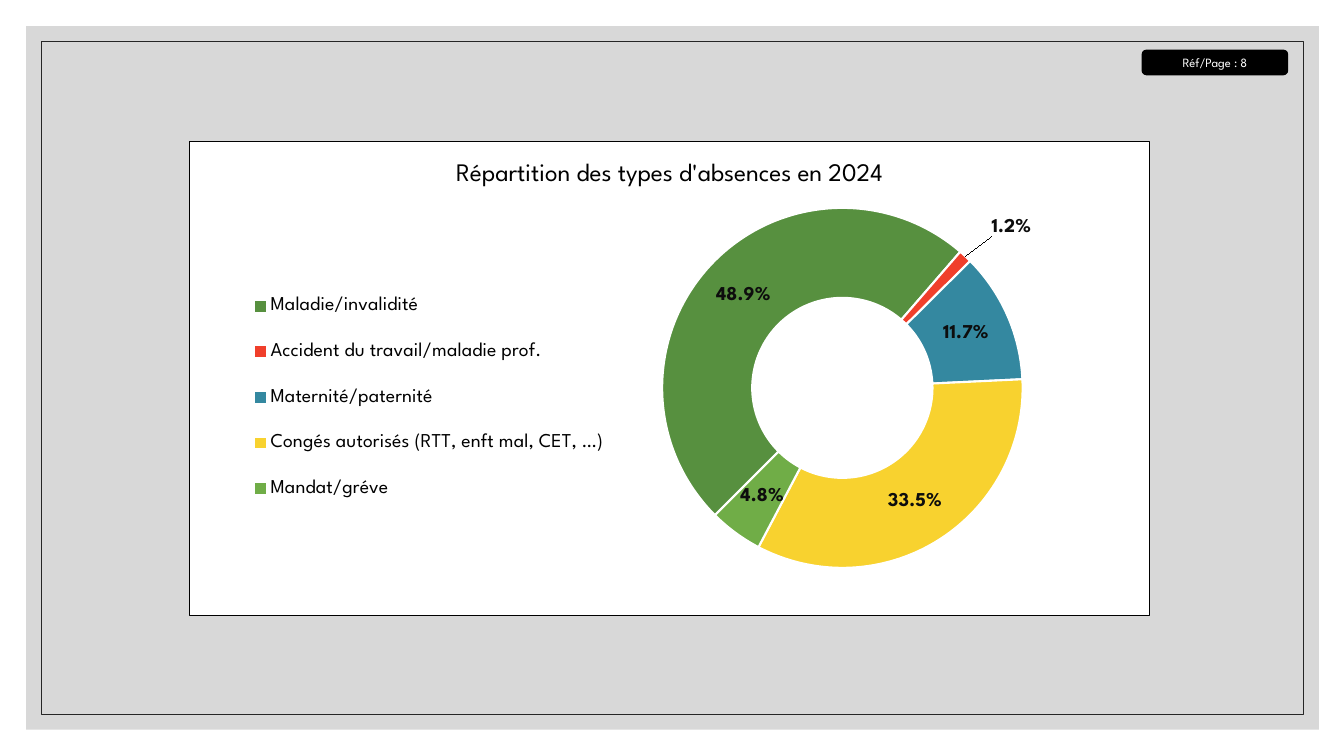
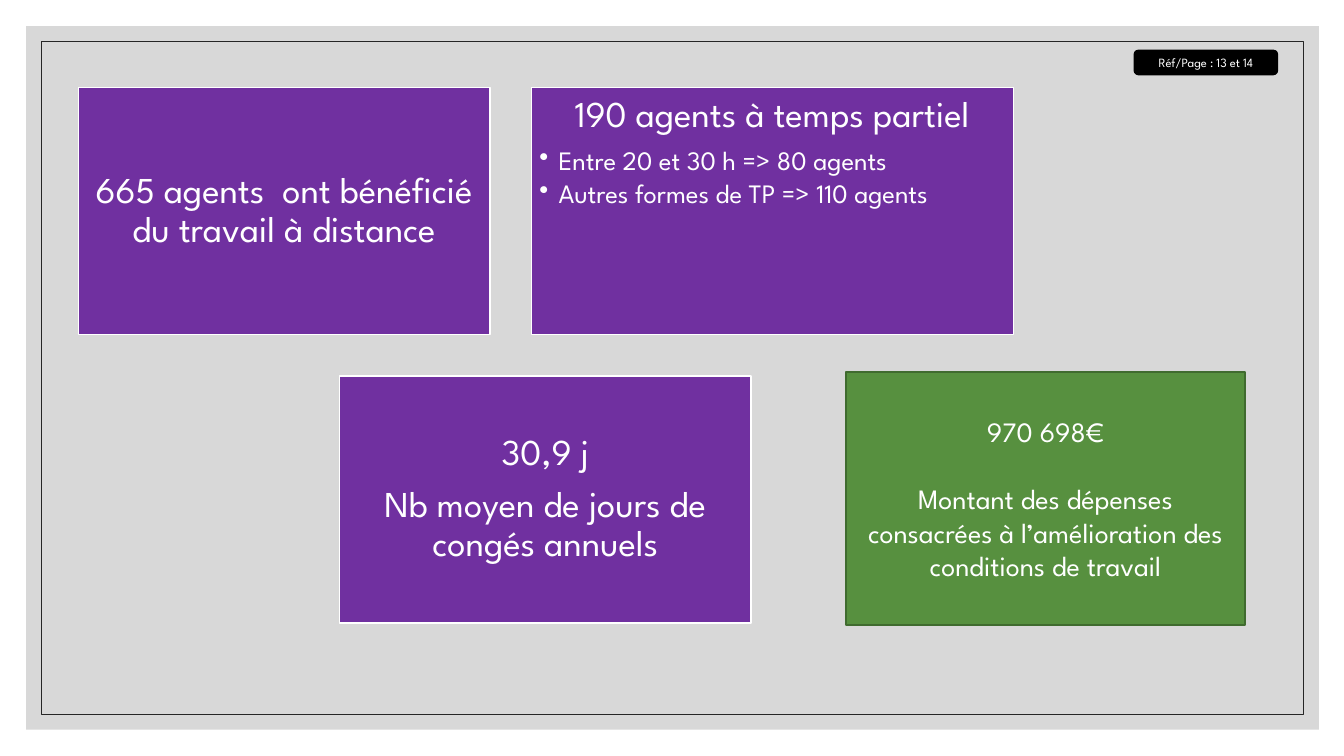
from dataclasses import dataclass

import pptx
import pptx.chart.data
import pptx.dml.color
import pptx.enum.chart
import pptx.enum.shapes
import pptx.enum.text
import pptx.oxml
import pptx.oxml.ns
import pptx.util
from pptx.util import Inches, Pt

RGBColor = pptx.dml.color.RGBColor
Shape = pptx.enum.shapes.MSO_SHAPE
Anchor = pptx.enum.text.MSO_ANCHOR
Align = pptx.enum.text.PP_ALIGN
qn = pptx.oxml.ns.qn

FONT = "League Spartan"
BLACK = RGBColor(0x00, 0x00, 0x00)
WHITE = RGBColor(0xFF, 0xFF, 0xFF)
GREY = RGBColor(0xD8, 0xD8, 0xD8)
FRAME = RGBColor(0x26, 0x26, 0x26)
INK = RGBColor(0x0D, 0x0D, 0x0D)
PURPLE = RGBColor(0x70, 0x30, 0xA0)
GREEN = RGBColor(0x57, 0x90, 0x3F)
MOSS = RGBColor(0x40, 0x6B, 0x2F)
RED = RGBColor(0xF0, 0x3F, 0x2B)
BLUE = RGBColor(0x34, 0x88, 0xA0)
YELLOW = RGBColor(0xF8, 0xD2, 0x2F)
LIME = RGBColor(0x70, 0xAD, 0x47)


@dataclass
class Box:
    left: float
    top: float
    width: float
    height: float


@dataclass
class Line:
    text: str
    size: float
    after: float = 0
    before: float = 0
    space: float = 1.0
    bullet: bool = False


@dataclass
class Card:
    box: Box
    lines: list[Line]
    fill: RGBColor = PURPLE
    edge: RGBColor = WHITE
    inset: float = 0.11
    anchor: Anchor = Anchor.MIDDLE


@dataclass
class Slice:
    name: str
    value: float
    fill: RGBColor


def big(text: str) -> Line:
    return Line(text, 26, after=9, space=0.9)


def item(text: str) -> Line:
    return Line(text, 19, after=3, space=0.9, bullet=True)


CARDS = [
    Card(Box(0.78, 0.87, 4.08, 2.45),
         [big("665 agents  ont bénéficié du travail à distance")]),
    Card(Box(5.27, 0.87, 4.78, 2.45),
         [big("190 agents à temps partiel"),
          item("Entre 20 et 30 h => 80 agents"),
          item("Autres formes de TP => 110 agents")],
         inset=0.08, anchor=Anchor.TOP),
    Card(Box(3.37, 3.73, 4.08, 2.45),
         [big("30,9 j"), big("Nb moyen de jours de congés annuels")]),
    Card(Box(8.39, 3.69, 3.96, 2.51),
         [Line("970 698€", 20),
          Line("Montant des dépenses consacrées à l’amélioration des "
               "conditions de travail", 20, before=24)],
         GREEN, MOSS, inset=0.1),
]

SLICES = [
    Slice("Maladie/invalidité", 0.489, GREEN),
    Slice("Accident du travail/maladie prof.", 0.012, RED),
    Slice("Maternité/paternité", 0.117, BLUE),
    Slice("Congés autorisés (RTT, enft mal, CET, …)", 0.335, YELLOW),
    Slice("Mandat/gréve", 0.048, LIME),
]


def add_box(slide, box: Box, kind=Shape.RECTANGLE, fill=None, edge=None,
            weight: float = 1):
    shape = slide.shapes.add_shape(
        kind, Inches(box.left), Inches(box.top),
        Inches(box.width), Inches(box.height))
    shape.shadow.inherit = False
    if fill is None:
        shape.fill.background()
    else:
        shape.fill.solid()
        shape.fill.fore_color.rgb = fill
    if edge is None:
        shape.line.fill.background()
    else:
        shape.line.color.rgb = edge
        shape.line.width = Pt(weight)
    return shape


def set_font(font, size: float, color: RGBColor, bold: bool = False) -> None:
    font.name = FONT
    font.size = Pt(size)
    font.bold = bold
    font.color.rgb = color


def add_bullet(par) -> None:
    props = par._p.get_or_add_pPr()
    props.set("marL", str(Inches(0.19)))
    props.set("indent", str(-Inches(0.19)))
    mark = props.makeelement(qn("a:buChar"), {"char": "•"})
    props.append(mark)


def write(frame, lines: list[Line]) -> None:
    frame.word_wrap = True
    frame.text = "\n".join(line.text for line in lines)
    for par, line in zip(frame.paragraphs, lines):
        par.alignment = Align.LEFT if line.bullet else Align.CENTER
        par.line_spacing = line.space
        par.space_after = Pt(line.after)
        if line.before:
            par.space_before = Pt(line.before)
        if line.bullet:
            add_bullet(par)
        for run in par.runs:
            set_font(run.font, line.size, WHITE)


def add_card(slide, card: Card) -> None:
    shape = add_box(slide, card.box, fill=card.fill, edge=card.edge)
    frame = shape.text_frame
    frame.vertical_anchor = card.anchor
    frame.margin_left = frame.margin_right = Inches(card.inset)
    frame.margin_top = frame.margin_bottom = Inches(card.inset)
    write(frame, card.lines)


def add_page(deck, pages: str, left: float, width: float):
    """Add a slide with the grey frame and the page reference tag."""
    slide = deck.slides.add_slide(deck.slide_layouts[6])
    add_box(slide, Box(0.26, 0.26, 12.82, 6.98), fill=GREY)
    add_box(slide, Box(0.41, 0.41, 12.52, 6.68), edge=FRAME, weight=0.5)
    tag = add_box(slide, Box(left, 0.5, width, 0.24),
                  Shape.ROUNDED_RECTANGLE, BLACK, BLACK)
    tag.text_frame.vertical_anchor = Anchor.MIDDLE
    write(tag.text_frame, [Line(f"Réf/Page : {pages}", 9)])
    return slide


def chart_xml(tag: str, inner: str):
    space = pptx.oxml.ns.nsdecls("c", "a")
    return pptx.oxml.parse_xml(f"<c:{tag} {space}>{inner}</c:{tag}>")


def place(parent, index: int, modes: str = "", **parts: float) -> None:
    """Give a chart part a manual layout, in shares of the chart size."""
    for old in parent.findall(qn("c:layout")):
        parent.remove(old)
    inner = modes + "".join(
        f'<c:{key} val="{share}"/>' for key, share in parts.items())
    layout = chart_xml("layout", f"<c:manualLayout>{inner}</c:manualLayout>")
    parent.insert(index, layout)


def style_area(chart) -> None:
    fill = f'<a:solidFill><a:srgbClr val="{WHITE}"/></a:solidFill>'
    edge = f'<a:solidFill><a:srgbClr val="{BLACK}"/></a:solidFill>'
    area = chart_xml("spPr", f'{fill}<a:ln w="{Pt(0.75)}">{edge}</a:ln>')
    chart._chartSpace.find(qn("c:chart")).addnext(area)


def style_ring(chart) -> None:
    plot = chart.plots[0]
    plot.vary_by_categories = True
    root = chart._chartSpace
    ring = root.xpath(".//c:doughnutChart")[0]
    for tag, value in (("c:firstSliceAng", 225), ("c:holeSize", 51)):
        part = ring.find(qn(tag))
        if part is None:
            part = ring.makeelement(qn(tag), {})
            ring.append(part)
        part.set("val", str(value))

    series = plot.series[0]
    for index, part in enumerate(SLICES):
        look = series.points[index].format
        look.fill.solid()
        look.fill.fore_color.rgb = part.fill
        look.line.color.rgb = WHITE
        look.line.width = Pt(1.5)

    labels = series.data_labels
    labels.show_value = True
    labels.show_percentage = False
    labels.number_format = "0.0%"
    labels.number_format_is_linked = False
    set_font(labels.font, 14, INK, bold=True)

    set_font(series.points[1].data_label.font, 14, INK, bold=True)
    label = root.xpath(".//c:dLbl")[0]
    place(label, 1, x=0.08, y=-0.13)
    style = label.makeelement(
        qn("c:numFmt"), {"formatCode": "0.0%", "sourceLinked": "0"})
    label.insert(2, style)


def add_ring(slide, box: Box) -> None:
    data = pptx.chart.data.CategoryChartData(number_format="0.0%")
    data.categories = [part.name for part in SLICES]
    data.add_series("Series 1", [part.value for part in SLICES])
    chart = slide.shapes.add_chart(
        pptx.enum.chart.XL_CHART_TYPE.DOUGHNUT,
        Inches(box.left), Inches(box.top),
        Inches(box.width), Inches(box.height), data).chart
    set_font(chart.font, 10, BLACK)
    style_area(chart)

    chart.has_title = True
    title = chart.chart_title.text_frame
    title.text = "Répartition des types d'absences en 2024"
    set_font(title.paragraphs[0].runs[0].font, 18, BLACK)

    chart.has_legend = True
    legend = chart.legend
    legend.position = pptx.enum.chart.XL_LEGEND_POSITION.LEFT
    legend.include_in_layout = False
    set_font(legend.font, 14, BLACK)
    edges = '<c:xMode val="edge"/><c:yMode val="edge"/>'
    place(legend._element, 1, edges, x=0.06, y=0.27, w=0.38, h=0.54)
    area = chart._chartSpace.xpath(".//c:plotArea")[0]
    place(area, 0, '<c:layoutTarget val="inner"/>' + edges,
          x=0.48, y=0.14, w=0.4, h=0.76)
    style_ring(chart)


def main() -> None:
    deck = pptx.Presentation()
    deck.slide_width = Inches(13.33)
    deck.slide_height = Inches(7.5)

    add_ring(add_page(deck, "8", 11.33, 1.44), Box(1.87, 1.4, 9.54, 4.71))

    slide = add_page(deck, "13 et 14", 11.25, 1.42)
    for card in CARDS:
        add_card(slide, card)

    deck.save("out.pptx")


if __name__ == "__main__":
    main()
